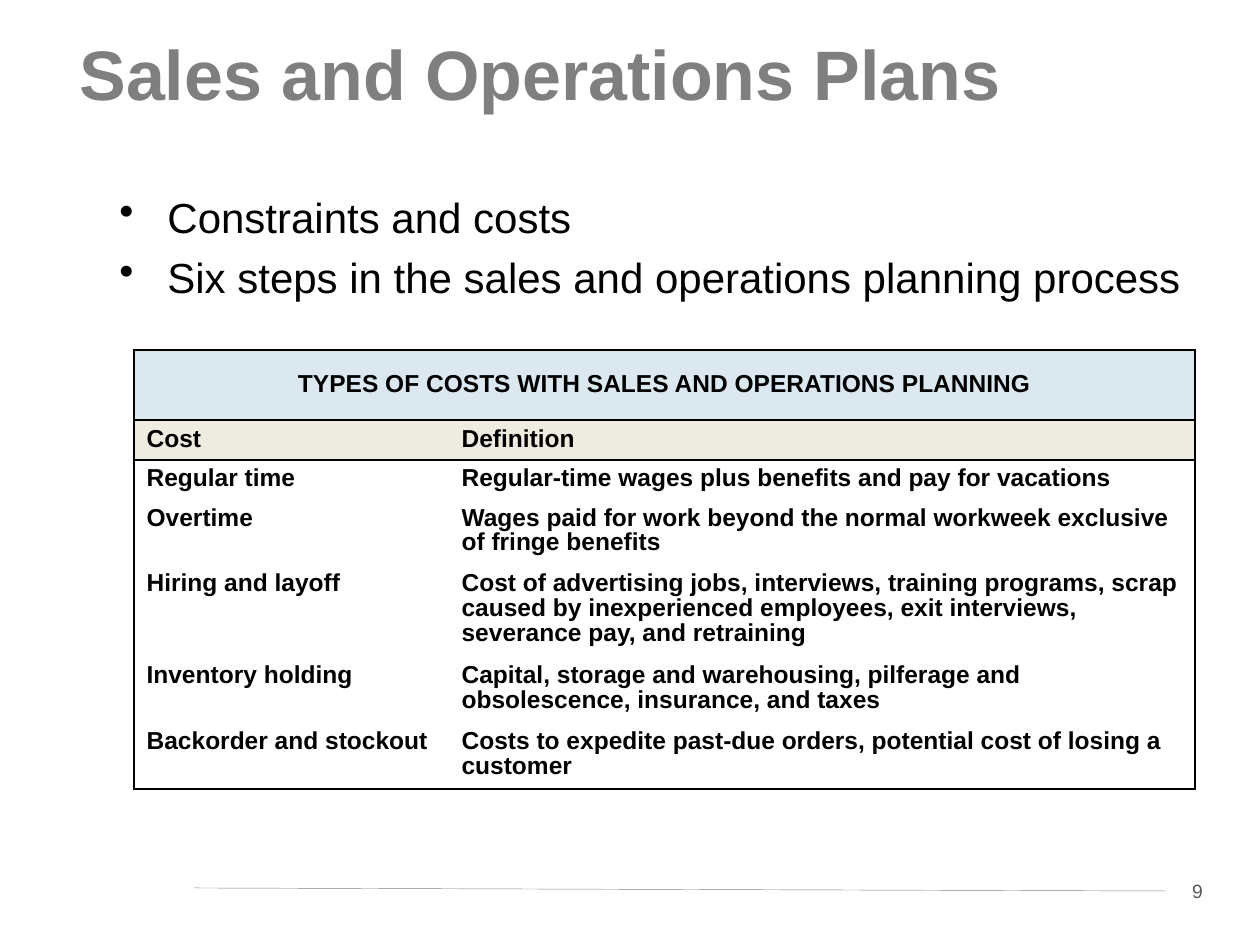
import pptx
import pptx.util
import pptx.dml.color
import pptx.enum.shapes
import pptx.enum.text
from lxml import etree
from pptx.oxml.ns import qn

RGBColor = pptx.dml.color.RGBColor
BLACK = RGBColor(0x00, 0x00, 0x00)
WHITE = RGBColor(0xFF, 0xFF, 0xFF)
TITLE_GRAY = RGBColor(0x7F, 0x7F, 0x7F)
LINE_GRAY = RGBColor(0x80, 0x80, 0x80)
NUMBER_GRAY = RGBColor(0x59, 0x59, 0x59)
PALE_BLUE = RGBColor(0xDB, 0xE8, 0xEF)
CREAM = RGBColor(0xEE, 0xEC, 0xE1)

FONT = "Arial"
PX_PER_INCH = 126
MIDDLE = pptx.enum.text.MSO_ANCHOR.MIDDLE
CENTER = pptx.enum.text.PP_ALIGN.CENTER

COLUMN_WIDTHS = [315, 746]
ROW_HEIGHTS = [70, 40, 40, 65, 87, 62, 63]
HEADER_FILLS = [PALE_BLUE, CREAM]
COSTS = [
    ("TYPES OF COSTS WITH SALES AND OPERATIONS PLANNING", ""),
    ("Cost", "Definition"),
    ("Regular time", "Regular-time wages plus benefits and pay for vacations"),
    ("Overtime", "Wages paid for work beyond the normal workweek exclusive of fringe benefits"),
    ("Hiring and layoff", "Cost of advertising jobs, interviews, training programs, scrap "
     "caused by inexperienced employees, exit interviews, severance pay, and retraining"),
    ("Inventory holding", "Capital, storage and warehousing, pilferage and obsolescence, "
     "insurance, and taxes"),
    ("Backorder and stockout", "Costs to expedite past-due orders, potential cost of losing a customer"),
]


def px(length):
    return pptx.util.Emu(round(length * 914400 / PX_PER_INCH))


def style(paragraph, size, color, bold=False):
    font = paragraph.font
    font.name = FONT
    font.size = pptx.util.Pt(size)
    font.bold = bold
    font.color.rgb = color


def add_text(page, bounds, top_inset):
    box = page.shapes.add_textbox(*map(px, bounds))
    box.text_frame.word_wrap = True
    box.text_frame.margin_top = px(top_inset)
    return box.text_frame


def add_title(page, text):
    paragraph = add_text(page, (67, 16, 1126, 127), 15).paragraphs[0]
    paragraph.text = text
    style(paragraph, 40, TITLE_GRAY, bold=True)


def add_bullets(page, items):
    frame = add_text(page, (107, 180, 1090, 181), 11)
    for index, item in enumerate(items):
        paragraph = frame.add_paragraph() if index else frame.paragraphs[0]
        paragraph.text = item
        properties = paragraph._p.get_or_add_pPr()
        properties.set("marL", str(px(48)))
        properties.set("indent", str(px(-48)))
        if index:
            paragraph.space_before = pptx.util.Pt(5.8)
        etree.SubElement(properties, qn("a:buChar"), char="•")
        style(paragraph, 24, BLACK)


def set_borders(cell, sides):
    properties = cell._tc.get_or_add_tcPr()
    for index, side in enumerate("LRTB"):
        line = etree.Element(qn("a:ln" + side), w=str(pptx.util.Pt(1.5)))
        if side in sides:
            fill = etree.SubElement(line, qn("a:solidFill"))
            etree.SubElement(fill, qn("a:srgbClr"), val=str(BLACK))
        else:
            etree.SubElement(line, qn("a:noFill"))
        properties.insert(index, line)


def border_sides(row, column):
    last_row = len(COSTS) - 1
    rules = {
        "L": column == 0,
        "R": column == 1 or row == 0,
        "T": row <= 2,
        "B": row <= 1 or row == last_row,
    }
    return [side for side, shown in rules.items() if shown]


def fill_cell(cell, text, row, column):
    if row < len(HEADER_FILLS):
        cell.fill.solid()
        cell.fill.fore_color.rgb = HEADER_FILLS[row]
        cell.vertical_anchor = MIDDLE
    else:
        cell.fill.background()
    set_borders(cell, border_sides(row, column))
    paragraph = cell.text_frame.paragraphs[0]
    paragraph.text = text
    paragraph.line_spacing = 0.9
    if row == 0:
        paragraph.alignment = CENTER
    style(paragraph, 14, BLACK, bold=True)


def add_cost_table(page):
    size = (px(sum(COLUMN_WIDTHS)), px(sum(ROW_HEIGHTS)))
    frame = page.shapes.add_table(len(COSTS), len(COLUMN_WIDTHS), px(134), px(350), *size)
    table = frame.table
    for column, width in zip(table.columns, COLUMN_WIDTHS):
        column.width = px(width)
    for row, height in zip(table.rows, ROW_HEIGHTS):
        row.height = px(height)
    for row, texts in enumerate(COSTS):
        for column, text in enumerate(texts):
            fill_cell(table.cell(row, column), text, row, column)
    table.cell(0, 0).merge(table.cell(0, 1))


def add_page_number(page, number):
    box = page.shapes.add_shape(
        pptx.enum.shapes.MSO_SHAPE.RECTANGLE, px(1166), px(873), px(63), px(36))
    box.shadow.inherit = False
    box.fill.solid()
    box.fill.fore_color.rgb = WHITE
    box.line.fill.background()
    box.text_frame.vertical_anchor = MIDDLE
    paragraph = box.text_frame.paragraphs[0]
    paragraph.text = number
    paragraph.alignment = CENTER
    style(paragraph, 11, NUMBER_GRAY)
    return box


def add_footer_line(page, number_box):
    line = page.shapes.add_connector(
        pptx.enum.shapes.MSO_CONNECTOR.STRAIGHT, px(194), px(888), px(1166), px(891))
    line.end_connect(number_box, 1)
    line.line.color.rgb = LINE_GRAY
    line.line.width = pptx.util.Pt(0.25)
    etree.SubElement(line._element.spPr, qn("a:effectLst"))


def main():
    deck = pptx.Presentation()
    deck.slide_width = px(1260)
    deck.slide_height = px(945)
    page = deck.slides.add_slide(deck.slide_layouts[6])
    add_footer_line(page, add_page_number(page, "9"))
    add_title(page, "Sales and Operations Plans")
    add_bullets(page, ["Constraints and costs",
                       "Six steps in the sales and operations planning process"])
    add_cost_table(page)
    deck.save("out.pptx")


if __name__ == "__main__":
    main()
